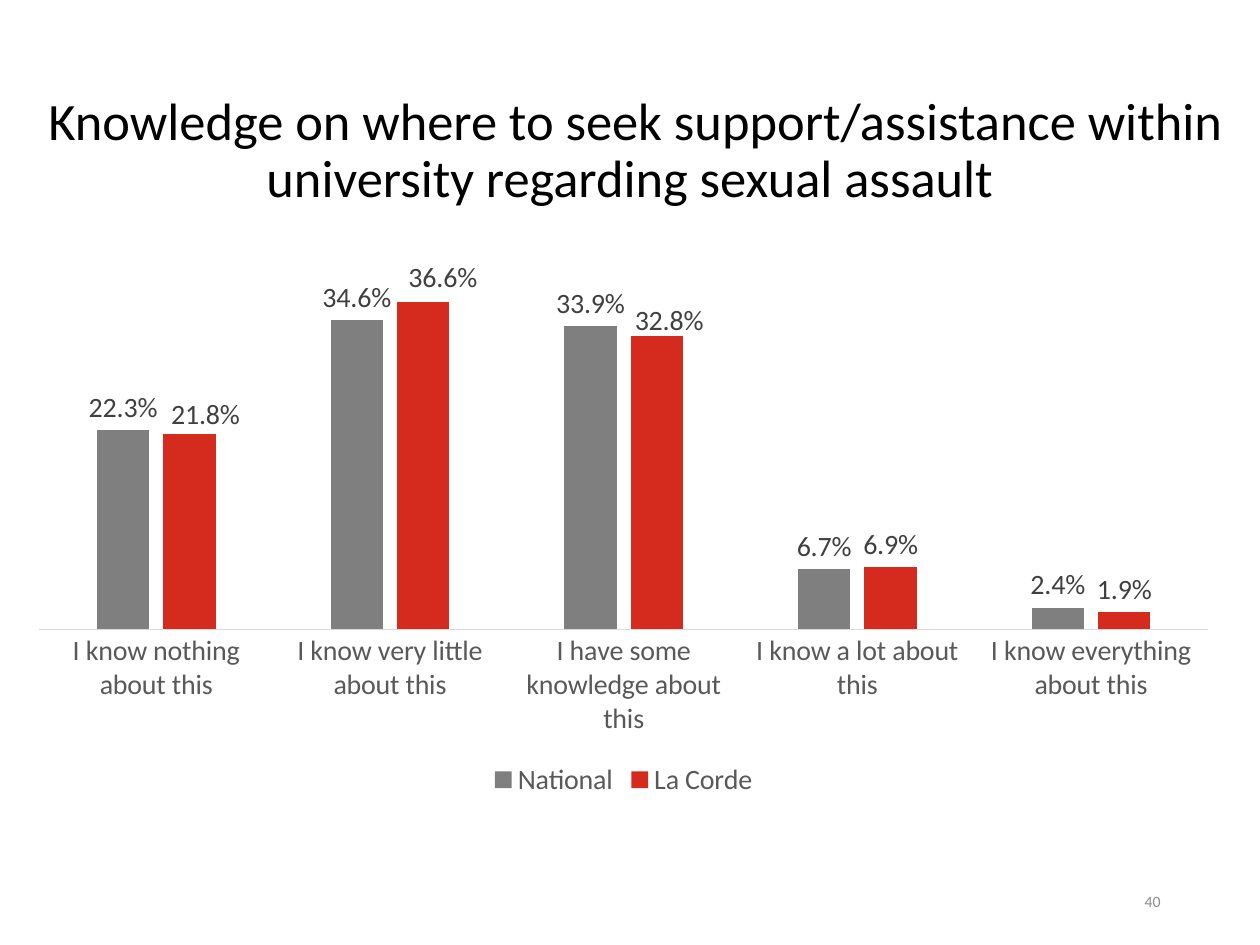
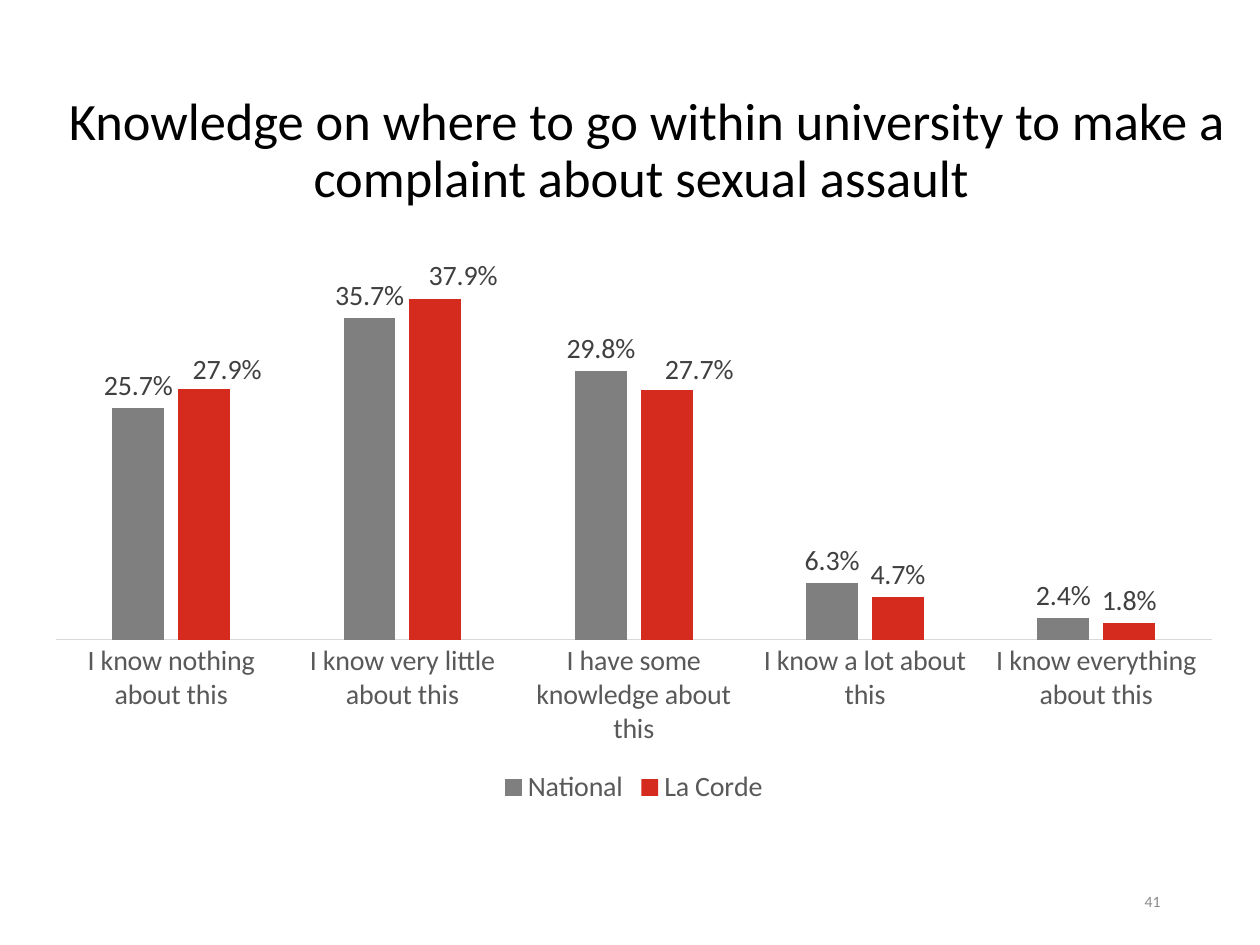
"""Build two slides of clustered column charts on what students know about support."""
from lxml.etree import SubElement
from pptx import Presentation
from pptx.chart.data import CategoryChartData
from pptx.dml.color import RGBColor
from pptx.enum.chart import (XL_CHART_TYPE, XL_LABEL_POSITION,
                             XL_LEGEND_POSITION, XL_TICK_MARK)
from pptx.enum.text import MSO_ANCHOR, PP_ALIGN
from pptx.oxml.ns import qn
from pptx.util import Pt


def style(font, size, hue):
    font.name = "Calibri"
    font.size = Pt(size)
    font.color.rgb = RGBColor.from_string(hue)


def place(node, index, **parts):
    for old in node.findall(qn("c:layout")):
        node.remove(old)
    layout = SubElement(node, qn("c:layout"))
    node.insert(index, layout)
    manual = SubElement(layout, qn("c:manualLayout"))
    for name, value in parts.items():
        SubElement(manual, qn(f"c:{name}")).set("val", str(value))


BLACK, GREY, RED = "000000", "7F7F7F", "D52B1E"
AXIS, LABEL, RULE, FOOT = "595959", "404040", "D9D9D9", "8C8C8C"
GROUPS = ["I know nothing about this", "I know very little about this",
          "I have some knowledge about this", "I know a lot about this",
          "I know everything about this"]
PAGES = [
    {"title": " Knowledge on where to seek support/assistance within "
              "university regarding sexual assault",
     "left": 8.64, "frame": (8.64, 149.04, 695.52, 309.6),
     "plot": (0.02, 0.66),
     "nation": (0.223, 0.346, 0.339, 0.067, 0.024),
     "campus": (0.218, 0.366, 0.328, 0.069, 0.019),
     "shifts": [(0.013, 0.005), (0.016, -0.004), (0.01, 0.013)]},
    {"title": " Knowledge on where to go within university to make a "
              "complaint about sexual assault",
     "left": 15.12, "frame": (18, 148.32, 688.32, 314.64),
     "plot": (0.035, 0.655),
     "nation": (0.257, 0.357, 0.298, 0.063, 0.024),
     "campus": (0.279, 0.379, 0.277, 0.047, 0.018),
     "shifts": [(0.019, 0.007), (0.023, 0), (0.027, 0.004)]},
]

deck = Presentation()
deck.slide_width, deck.slide_height = Pt(720), Pt(540)

for number, page in enumerate(PAGES, 40):
    slide = deck.slides.add_slide(deck.slide_layouts[6])
    texts = [
        (page["title"], (page["left"], 60.48, 702.72, 52.56), 30, BLACK, PP_ALIGN.CENTER, 0.9),
        (str(number), (508.32, 500.4, 162, 28.8), 9, FOOT, PP_ALIGN.RIGHT, 1.0),
    ]
    for words, box, size, hue, align, spacing in texts:
        frame = slide.shapes.add_textbox(*map(Pt, box)).text_frame
        frame.word_wrap = True
        frame.vertical_anchor = MSO_ANCHOR.MIDDLE
        if size == 30:
            frame.margin_left = frame.margin_right = Pt(5)
            frame.margin_top = frame.margin_bottom = Pt(3)
        line = frame.paragraphs[0]
        line.text = words
        line.alignment = align
        line.line_spacing = spacing
        style(line.font, size, hue)

    data = CategoryChartData(number_format="0.0%")
    data.categories = GROUPS
    data.add_series("National", page["nation"])
    data.add_series("La Corde", page["campus"])
    chart = slide.shapes.add_chart(
        XL_CHART_TYPE.COLUMN_CLUSTERED, *map(Pt, page["frame"]), data).chart
    style(chart.font, 10, BLACK)
    chart.has_title = False
    chart.has_legend = True
    chart.legend.position = XL_LEGEND_POSITION.BOTTOM
    chart.legend.include_in_layout = False
    style(chart.legend.font, 16, AXIS)

    axis = chart.category_axis
    axis.major_tick_mark = XL_TICK_MARK.NONE
    axis.format.line.color.rgb = RGBColor.from_string(RULE)
    axis.format.line.width = Pt(0.75)
    style(axis.tick_labels.font, 16, AXIS)
    scale = chart.value_axis
    scale.minimum_scale, scale.maximum_scale = 0, 0.4
    scale.has_major_gridlines = False
    scale.visible = False

    bars = chart.plots[0]
    bars.gap_width, bars.overlap = 219, -27
    bars.vary_by_categories = False
    for series, hue in zip(bars.series, (GREY, RED)):
        series.format.fill.solid()
        series.format.fill.fore_color.rgb = RGBColor.from_string(hue)
        labels = series.data_labels
        labels.show_value = True
        labels.number_format = "0.0%"
        labels.number_format_is_linked = False
        labels.position = XL_LABEL_POSITION.OUTSIDE_END
        style(labels.font, 16, LABEL)

    campus = bars.series[1]
    for index in range(len(page["shifts"])):
        label = campus.points[index].data_label
        label.position = XL_LABEL_POSITION.OUTSIDE_END
        style(label.font, 16, LABEL)
    for node, (x, y) in zip(chart.element.iter(qn("c:dLbl")), page["shifts"]):
        place(node, 1, x=x, y=y)
    top, height = page["plot"]
    area = next(chart.element.iter(qn("c:plotArea")))
    place(area, 0, layoutTarget="inner", xMode="edge", yMode="edge",
          x=0.02, y=top, w=0.96, h=height)

deck.save("out.pptx")
